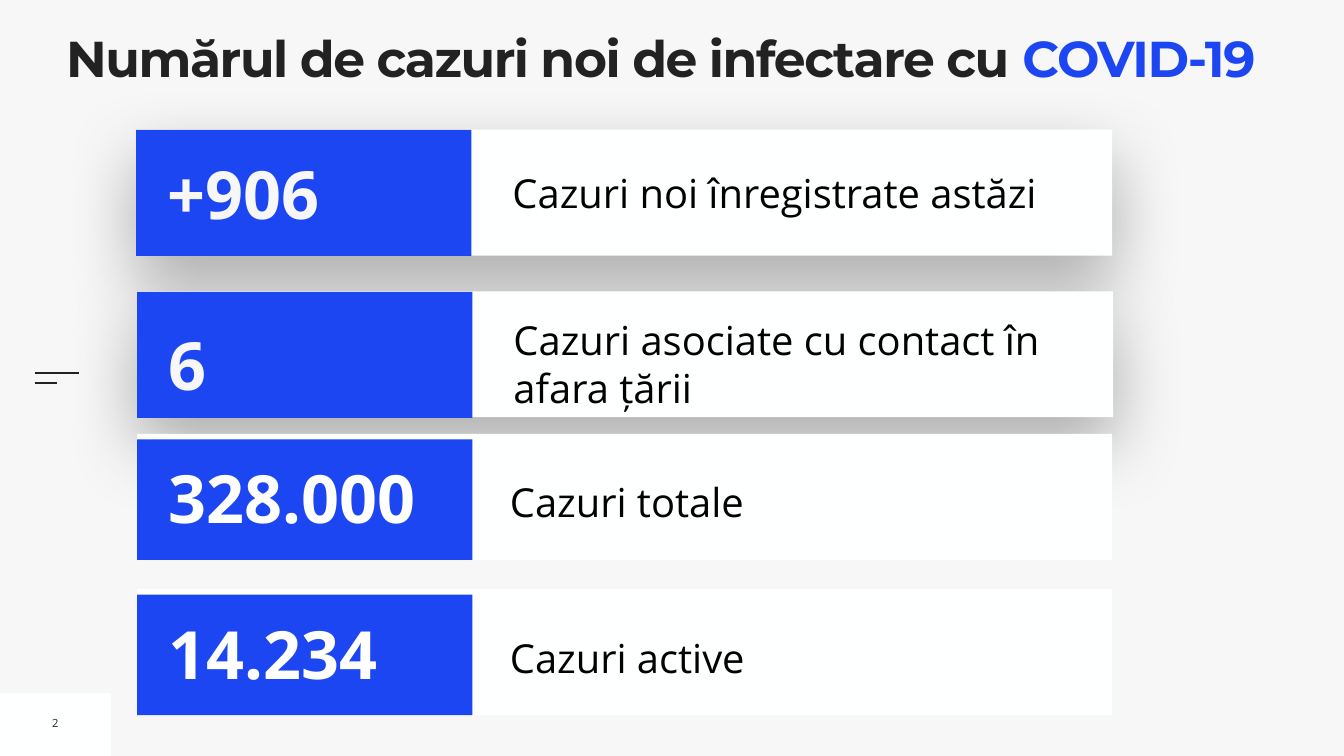
from dataclasses import dataclass

from lxml import etree
from pptx import Presentation
from pptx.dml.color import RGBColor
from pptx.enum.shapes import MSO_CONNECTOR, MSO_SHAPE
from pptx.enum.text import MSO_ANCHOR, MSO_AUTO_SIZE, PP_ALIGN
from pptx.oxml.ns import qn
from pptx.util import Cm, Pt

RECTANGLE = MSO_SHAPE.RECTANGLE
STRAIGHT = MSO_CONNECTOR.STRAIGHT
TOP = MSO_ANCHOR.TOP
MIDDLE = MSO_ANCHOR.MIDDLE
CENTER = PP_ALIGN.CENTER
GROW = MSO_AUTO_SIZE.SHAPE_TO_FIT_TEXT

PAPER = RGBColor(0xF7, 0xF7, 0xF7)
WHITE = RGBColor(0xFE, 0xFF, 0xFF)
PURE_WHITE = RGBColor(0xFF, 0xFF, 0xFF)
BLUE = RGBColor(0x1D, 0x46, 0xF3)
INK = RGBColor(0x22, 0x22, 0x22)
BLACK = RGBColor(0x00, 0x00, 0x00)

TITLE_FONT = "Montserrat"
BODY_FONT = "Open Sans"
CARD_HEIGHT = 6.35
STRIP_WIDTH = 16.9
VALUE_INDENT = 1.35
VALUE_SIZE = (15.32, 4.57)


@dataclass
class Frame:
    left: float
    top: float
    width: float
    height: float

    def lengths(self) -> tuple:
        return Cm(self.left), Cm(self.top), Cm(self.width), Cm(self.height)


@dataclass
class Span:
    text: str
    size: float
    color: RGBColor
    font: str = BODY_FONT
    bold: bool = False
    spacing: int = 0


@dataclass
class Card:
    value: str
    label: str
    left: float
    top: float
    strip_top: float
    value_top: float
    label_top: float
    label_height: float
    raised: bool


CARDS = [
    Card("14.234", "Cazuri active", 6.91, 29.69, 29.97, 30.61, 31.17, 3.18, False),
    Card("+906", "Cazuri noi înregistrate astăzi", 6.86, 6.53, 6.55, 7.42, 8.23, 2.95, True),
    Card("6", "Cazuri asociate cu contact în afara țării", 6.91, 14.68, 14.71, 16.05, 15.65, 5.38, True),
    Card("328.000", "Cazuri totale", 6.91, 21.87, 22.15, 22.76, 23.5, 2.84, False),
]


def add_rectangle(shapes, frame: Frame, color: RGBColor):
    box = shapes.add_shape(RECTANGLE, *frame.lengths())
    box.fill.solid()
    box.fill.fore_color.rgb = color
    box.line.fill.background()
    box.shadow.inherit = False
    return box


def add_soft_shadow(box) -> None:
    effects = box._element.spPr.find(qn("a:effectLst"))
    shadow = etree.SubElement(
        effects, qn("a:outerShdw"), blurRad=str(Pt(100)), dist=str(Pt(40)),
        dir="5400000", algn="ctr", rotWithShape="0")
    color = etree.SubElement(shadow, qn("a:srgbClr"), val=str(BLACK))
    etree.SubElement(color, qn("a:alpha"), val="30000")


def add_text(shapes, frame: Frame, spans: list[Span], inset: float = 0.25,
             anchor: MSO_ANCHOR = MIDDLE, wrap: bool = True, grow: bool = True):
    box = shapes.add_textbox(*frame.lengths())
    body = box.text_frame
    body.word_wrap = wrap
    body.vertical_anchor = anchor
    if grow:
        body.auto_size = GROW
    body.margin_left = body.margin_right = Cm(inset)
    body.margin_top = body.margin_bottom = Cm(inset)
    para = body.paragraphs[0]
    for span in spans:
        run = para.add_run()
        run.text = span.text
        run.font.name = span.font
        run.font.size = Pt(span.size)
        run.font.bold = span.bold
        run.font.color.rgb = span.color
        if span.spacing:
            run.font._element.set("spc", str(span.spacing))
    return para


def add_rule(page, top: float, end: float) -> None:
    rule = page.shapes.add_connector(STRAIGHT, Cm(1.75), Cm(top), Cm(end), Cm(top))
    rule.line.color.rgb = INK
    rule.line.width = Pt(3)
    etree.SubElement(rule._element.spPr, qn("a:effectLst"))


def add_card(page, card: Card) -> None:
    shapes = page.shapes.add_group_shape().shapes
    width = 49.2 if card.raised else 49.15
    panel = add_rectangle(shapes, Frame(card.left, card.top, width, CARD_HEIGHT), WHITE)
    if card.raised:
        add_soft_shadow(panel)
    label = Span(card.label, 57, BLACK)
    if card.raised:
        add_text(shapes, Frame(card.left + 18.72, card.label_top, 29.87, card.label_height), [label])
    else:
        para = add_text(shapes, Frame(card.left + 18.79, card.label_top, 29.41, card.label_height),
                        [label], inset=0)
        para.line_spacing = 1.3
        para.space_before = Pt(20)
    strip_height = CARD_HEIGHT if card.raised else 6.07
    add_rectangle(shapes, Frame(card.left, card.strip_top, STRIP_WIDTH, strip_height), BLUE)
    color = PAPER if card.raised else PURE_WHITE
    add_text(shapes, Frame(card.left + VALUE_INDENT, card.value_top, *VALUE_SIZE),
             [Span(card.value, 95, color, bold=True)])


def main() -> None:
    deck = Presentation()
    deck.slide_width = Cm(67.74)
    deck.slide_height = Cm(38.1)
    page = deck.slides.add_slide(deck.slide_layouts[6])
    page.background.fill.solid()
    page.background.fill.fore_color.rgb = PAPER

    add_rectangle(page.shapes, Frame(0, 34.95, 5.59, 3.15), WHITE)
    add_rule(page, 18.82, 3.99)
    add_rule(page, 19.28, 2.87)
    number = add_text(page.shapes, Frame(2.36, 35.79, 0.86, 1.3), [Span("2", 16, INK)], wrap=False)
    number.alignment = CENTER

    title = add_text(
        page.shapes, Frame(3.33, 1.98, 60.81, 4.01),
        [Span("Numărul de cazuri noi de infectare cu ", 72, INK, TITLE_FONT, True, -200),
         Span("COVID-19", 72, BLUE, TITLE_FONT, True, -200)],
        inset=0, anchor=TOP, grow=False)
    title.line_spacing = 0.8

    for card in CARDS:
        add_card(page, card)
    deck.save("out.pptx")


if __name__ == "__main__":
    main()
